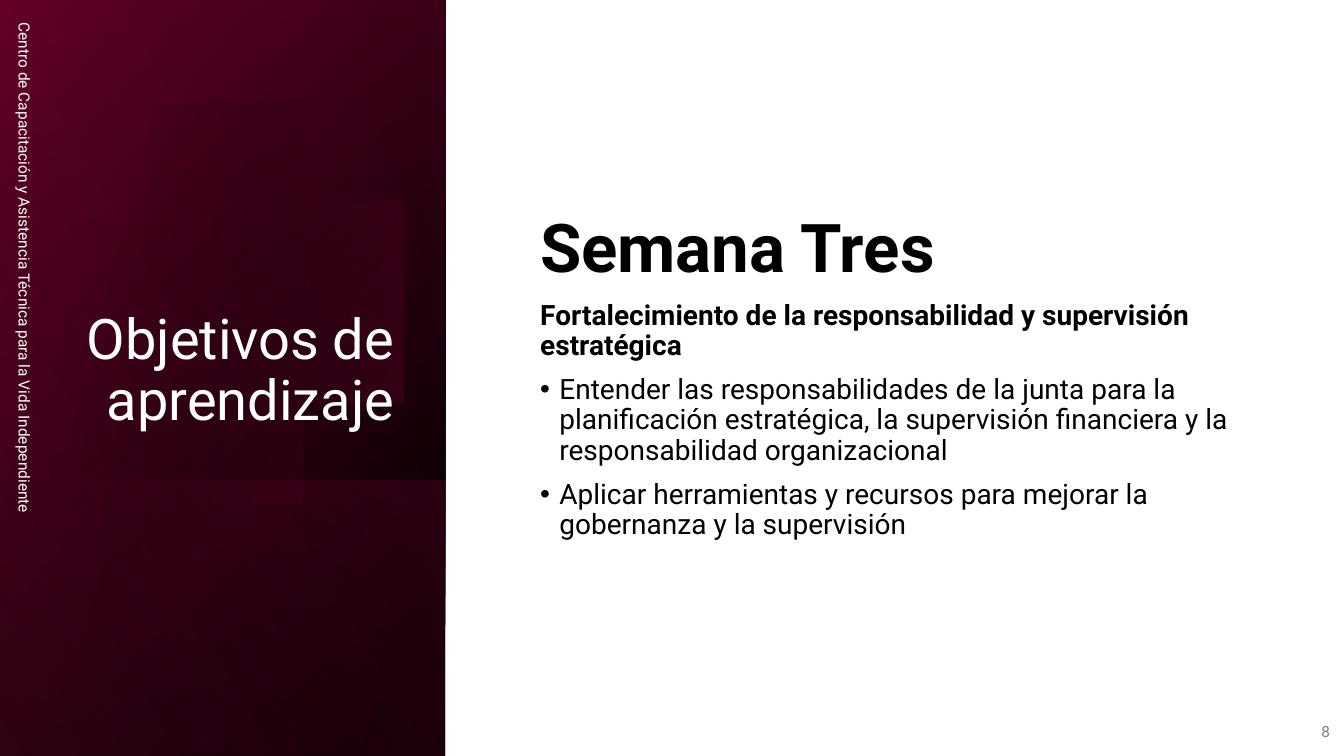
from math import acos, cos, sin
from lxml.etree import SubElement
from pptx import Presentation
from pptx.dml.color import RGBColor
from pptx.enum.shapes import MSO_SHAPE as SHAPE
from pptx.enum.text import MSO_ANCHOR as ANCHOR, MSO_AUTO_SIZE as AUTO, PP_ALIGN as ALIGN
from pptx.oxml.ns import qn
from pptx.util import Inches, Pt

W, H = 13.33, 7.5
PANEL_W = W * 0.3315
FONT = "Roboto"
WHITE, BLACK, GREY = "FFFFFF", "000000", "808080"
WINE, DARK_WINE, PINK = "70002E", "540022", "FF1072"
INDENT = 0.19

BODY = [
    ("Semana Tres", 48, True, False),
    ("Fortalecimiento de la responsabilidad y supervisión estratégica", 20, True, False),
    ("Entender las responsabilidades de la junta para la planificación estratégica, "
     "la supervisión financiera y la responsabilidad organizacional", 20, False, True),
    ("Aplicar herramientas y recursos para mejorar la gobernanza y la supervisión",
     20, False, True),
]


def rgb(color):
    return RGBColor.from_string(color)


def inches(box):
    return [Inches(v) for v in box]


def fill_gradient(sp, angle, stops):
    sp.shadow.inherit = False
    sp.line.fill.background()
    sp.fill.gradient()
    grad = sp.element.spPr.find(qn("a:gradFill"))
    for child in list(grad):
        grad.remove(child)
    gs_list = SubElement(grad, qn("a:gsLst"))
    for pos, color, opacity in stops:
        gs = SubElement(gs_list, qn("a:gs"), pos=str(pos * 1000))
        clr = SubElement(gs, qn("a:srgbClr"), val=color)
        SubElement(clr, qn("a:alpha"), val=str(opacity * 1000))
    SubElement(grad, qn("a:lin"), ang=str(angle * 60000), scaled="0")


def add_run(p, text, size, color, bold=False):
    r = p.add_run()
    r.text = text
    r.font.name, r.font.size, r.font.bold = FONT, Pt(size), bold
    r.font.color.rgb = rgb(color)


def set_frame(sp, anchor):
    tf = sp.text_frame
    tf.word_wrap = True
    tf.auto_size = AUTO.NONE
    tf.vertical_anchor = anchor
    return tf


def add_label(s, box, text, color, align, rotation=0):
    sp = s.shapes.add_textbox(*inches(box))
    sp.rotation = rotation
    p = set_frame(sp, ANCHOR.MIDDLE).paragraphs[0]
    p.alignment = align
    p.space_after = Pt(6)
    add_run(p, text, 11, color)


def add_disc(s, cx, cy, radius, steps=120):
    half = acos(-cx / radius)
    angles = [half * (2 * i / steps - 1) for i in range(steps + 1)]
    points = [(cx + radius * cos(a), cy + radius * sin(a)) for a in angles]
    builder = s.shapes.build_freeform(*points[0], scale=Inches(1))
    builder.add_line_segments(points[1:], close=True)
    fill_gradient(builder.convert_to_shape(), 14, [(29, BLACK, 0), (100, WINE, 43)])


def add_panel(s, box):
    x, y, w, h = box
    band = h * 0.635

    def add_layer(top, angle, *stops):
        sp = s.shapes.add_shape(SHAPE.RECTANGLE, *inches((x, y + top, w, h - top)))
        fill_gradient(sp, angle, stops)

    add_layer(0, 220, (8, BLACK, 100), (100, DARK_WINE, 100))
    add_layer(0, 240, (0, BLACK, 0), (99, WINE, 46))
    add_layer(band, 140, (2, WINE, 29), (100, BLACK, 30))
    add_disc(s, x + w * 0.335, y + h * 0.45, w * 0.51)
    add_layer(0, 150, (0, BLACK, 0), (99, PINK, 11))


def add_title(s, box):
    title = s.shapes.title
    title.left, title.top, title.width, title.height = inches(box)
    title.element.getparent().append(title.element)
    p = set_frame(title, ANCHOR.BOTTOM).paragraphs[0]
    p.alignment = ALIGN.RIGHT
    p.line_spacing = 0.9
    add_run(p, "Objetivos de aprendizaje", 40, WHITE)


def add_body(s, box):
    tf = set_frame(s.shapes.add_textbox(*inches(box)), ANCHOR.MIDDLE)
    for i, (text, size, bold, bullet) in enumerate(BODY):
        p = tf.add_paragraph() if i else tf.paragraphs[0]
        p.line_spacing = 0.9
        p.space_before = Pt(10)
        if bullet:
            pPr = p._p.get_or_add_pPr()
            pPr.set("marL", str(Inches(INDENT)))
            pPr.set("indent", str(-Inches(INDENT)))
            SubElement(pPr, qn("a:buFont"), typeface="Arial")
            SubElement(pPr, qn("a:buChar"), char="•")
        add_run(p, text, size, BLACK, bold)


def main():
    prs = Presentation()
    prs.slide_width, prs.slide_height = Inches(W), Inches(H)
    s = prs.slides.add_slide(prs.slide_layouts[5])
    s.background.fill.solid()
    s.background.fill.fore_color.rgb = rgb(WHITE)
    add_panel(s, (0, 0, PANEL_W, H))
    add_title(s, (0.51, 0.64, 3.5, 3.7))
    add_body(s, (5.26, 0.71, 7.17, 6.07))
    add_label(s, (12.8, 7.06, 0.49, 0.4), "8", GREY, ALIGN.RIGHT)
    add_label(s, (-2.76, 2.93, 6.01, 0.4),
              "Centro de Capacitación y Asistencia Técnica para la Vida Independiente",
              WHITE, ALIGN.LEFT, rotation=90)
    prs.save("out.pptx")


if __name__ == "__main__":
    main()
